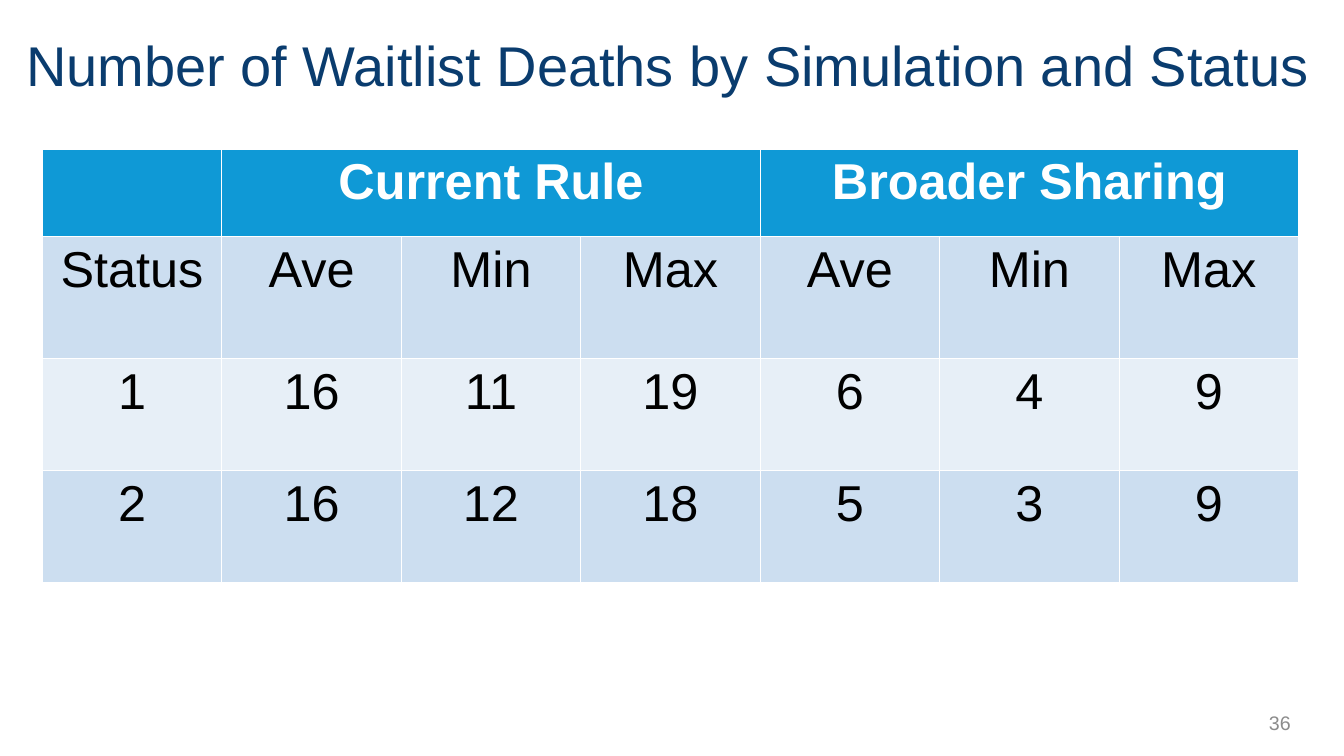
"""Build the slide on waitlist deaths by simulation and status."""
from pptx import Presentation
from pptx.dml.color import RGBColor
from pptx.enum.text import MSO_ANCHOR, MSO_AUTO_SIZE, PP_ALIGN
from pptx.util import Inches, Pt

NAVY = RGBColor(0x0A, 0x3C, 0x6E)
BLUE = RGBColor(0x0F, 0x99, 0xD6)
DARK_BAND = RGBColor(0xCC, 0xDE, 0xF0)
LIGHT_BAND = RGBColor(0xE7, 0xEF, 0xF7)
GREY = RGBColor(0x8C, 0x8C, 0x8C)
WHITE = RGBColor(0xFF, 0xFF, 0xFF)
BLACK = RGBColor(0, 0, 0)
LEFT, CENTER, RIGHT = PP_ALIGN.LEFT, PP_ALIGN.CENTER, PP_ALIGN.RIGHT
MIDDLE = MSO_ANCHOR.MIDDLE
NO_AUTOFIT = MSO_AUTO_SIZE.NONE

ROWS = [
    ["", "Current Rule", "", "", "Broader Sharing", "", ""],
    ["Status", "Ave", "Min", "Max", "Ave", "Min", "Max"],
    ["1", "16", "11", "19", "6", "4", "9"],
    ["2", "16", "12", "18", "5", "3", "9"],
]
ROW_HEIGHTS = [0.87, 1.21, 1.11, 1.11]
ROW_FILLS = [BLUE, DARK_BAND, LIGHT_BAND, DARK_BAND]
COL_WIDTH = 1.78


def style(p, size, color, align, bold=False):
    p.alignment = align
    p.font.name = "Arial"
    p.font.size = Pt(size)
    p.font.bold = bold
    p.font.color.rgb = color


prs = Presentation()
prs.slide_width, prs.slide_height = Inches(13.33), Inches(7.5)
s = prs.slides.add_slide(prs.slide_layouts[5])

title = s.shapes.title
title.left, title.top = Inches(0.16), Inches(0.17)
title.width, title.height = Inches(13.12), Inches(0.93)
tf = title.text_frame
tf.text = "Number of Waitlist Deaths by Simulation and Status"
tf.auto_size = NO_AUTOFIT
tf.vertical_anchor = MIDDLE
style(tf.paragraphs[0], 40, NAVY, LEFT)

table = s.shapes.add_table(
    len(ROWS), len(ROWS[0]), Inches(0.42), Inches(1.48),
    Inches(COL_WIDTH * len(ROWS[0])), Inches(sum(ROW_HEIGHTS))).table
for col in table.columns:
    col.width = Inches(COL_WIDTH)
for first in (1, 4):
    table.cell(0, first).merge(table.cell(0, first + 2))

for i, (values, height, fill) in enumerate(zip(ROWS, ROW_HEIGHTS, ROW_FILLS)):
    table.rows[i].height = Inches(height)
    header = i == 0
    for j, value in enumerate(values):
        cell = table.cell(i, j)
        cell.fill.solid()
        cell.fill.fore_color.rgb = fill
        if value:
            cell.text = value
            style(cell.text_frame.paragraphs[0], 36, WHITE if header else BLACK, CENTER, header)

number = s.shapes.add_textbox(Inches(10.64), Inches(6.97), Inches(2.26), Inches(0.4))
tf = number.text_frame
tf.word_wrap = True
tf.vertical_anchor = MIDDLE
tf.text = "36"
style(tf.paragraphs[0], 14, GREY, RIGHT)

prs.save("out.pptx")
